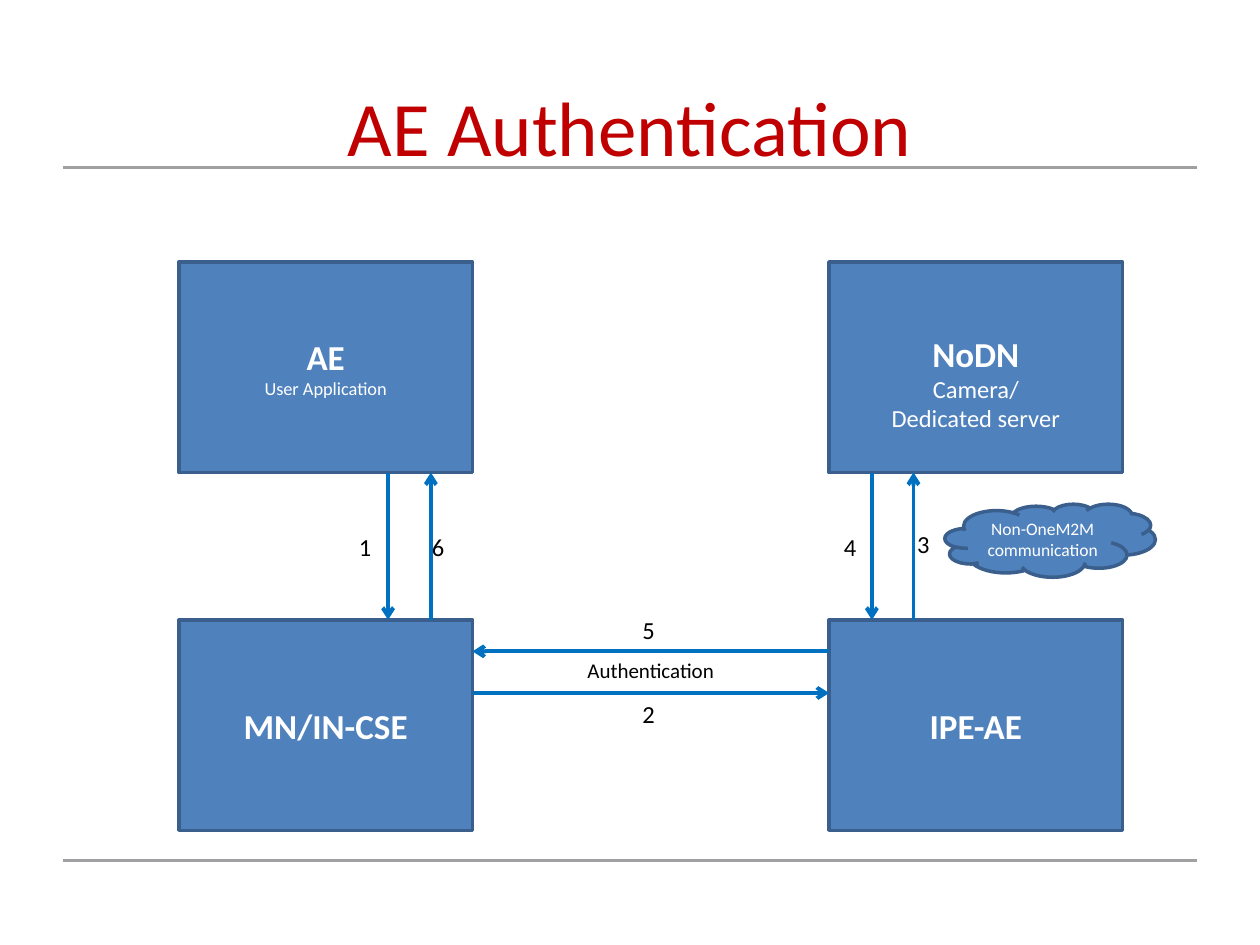
from dataclasses import dataclass

from lxml.etree import SubElement
from pptx import Presentation
from pptx.dml.color import RGBColor
from pptx.enum.shapes import MSO_CONNECTOR as Connector, MSO_SHAPE as Preset
from pptx.enum.text import MSO_ANCHOR as Anchor, PP_ALIGN as Align
from pptx.oxml.ns import qn
from pptx.slide import Slide
from pptx.text.text import TextFrame
from pptx.util import Inches, Pt

BOX_WIDTH, BOX_HEIGHT = 2.33, 1.67
LEFT, RIGHT = 1.42, 6.58
TOP, BOTTOM = 2.08, 4.92
INNER_LEFT, INNER_TOP = LEFT + BOX_WIDTH, TOP + BOX_HEIGHT
WHITE, BLACK, RED = "FFFFFF", "000000", "C00000"
FILL, OUTLINE, ARROW, RULE = "4F81BD", "3A5F8C", "0070C0", "A0A0A3"


@dataclass
class Line:
    text: str
    size: float
    color: str = WHITE
    bold: bool = False


@dataclass
class Node:
    left: float
    top: float
    lines: list[Line]
    width: float = BOX_WIDTH
    height: float = BOX_HEIGHT
    preset: Preset = Preset.RECTANGLE
    margin_top: float = 0.05


@dataclass
class Label:
    left: float
    top: float
    line: Line
    width: float = 0.3
    height: float = 0.34
    align: Align = Align.LEFT
    wrap: bool = False


@dataclass
class Stroke:
    start: tuple[float, float]
    end: tuple[float, float]
    color: str = ARROW
    width: float = 2.25
    arrow: bool = True


def rgb(color: str) -> RGBColor:
    return RGBColor.from_string(color)


def write_lines(frame: TextFrame, lines: list[Line], align: Align) -> None:
    for index, line in enumerate(lines):
        paragraph = frame.add_paragraph() if index else frame.paragraphs[0]
        paragraph.alignment = align
        run = paragraph.add_run()
        run.text = line.text
        formats = {"name": "Calibri", "size": Pt(line.size), "bold": line.bold}
        for name, value in formats.items():
            setattr(run.font, name, value)
        run.font.color.rgb = rgb(line.color)


def draw_node(slide: Slide, node: Node) -> None:
    shape = slide.shapes.add_shape(
        node.preset, Inches(node.left), Inches(node.top), Inches(node.width), Inches(node.height)
    )
    shape.shadow.inherit = False
    shape.fill.solid()
    shape.fill.fore_color.rgb = rgb(FILL)
    shape.line.color.rgb = rgb(OUTLINE)
    shape.line.width = Pt(2)
    frame = shape.text_frame
    formats = {
        "word_wrap": True,
        "vertical_anchor": Anchor.MIDDLE,
        "margin_top": Inches(node.margin_top),
    }
    for name, value in formats.items():
        setattr(frame, name, value)
    write_lines(frame, node.lines, Align.CENTER)


def draw_label(slide: Slide, label: Label) -> None:
    shape = slide.shapes.add_textbox(
        Inches(label.left), Inches(label.top), Inches(label.width), Inches(label.height)
    )
    shape.text_frame.word_wrap = label.wrap
    write_lines(shape.text_frame, [label.line], label.align)


def draw_stroke(slide: Slide, stroke: Stroke) -> None:
    points = [Inches(value) for value in (*stroke.start, *stroke.end)]
    connector = slide.shapes.add_connector(Connector.STRAIGHT, *points)
    connector.line.color.rgb = rgb(stroke.color)
    connector.line.width = Pt(stroke.width)
    if stroke.arrow:
        SubElement(connector.line._get_or_add_ln(), qn("a:tailEnd"), type="arrow")
    SubElement(connector._element.spPr, qn("a:effectLst"))


def heading(text: str) -> Line:
    return Line(text, 20, bold=True)


def build() -> None:
    presentation = Presentation()
    presentation.slide_width = Inches(10)
    presentation.slide_height = Inches(7.5)
    slide = presentation.slides.add_slide(presentation.slide_layouts[6])

    for y in (6.83, 1.33):
        draw_stroke(slide, Stroke((0.5, y), (9.5, y), RULE, 1.75, arrow=False))

    title = Line("AE Authentication", 44, RED)
    draw_label(slide, Label(0.5, 0.58, title, 9, 1.25, Align.CENTER, wrap=True))

    nodes = [
        Node(LEFT, TOP, [heading("AE"), Line("User Application", 10.5)]),
        Node(LEFT, BOTTOM, [heading("MN/IN-CSE")]),
        Node(RIGHT, BOTTOM, [heading("IPE-AE")]),
        Node(
            RIGHT,
            TOP,
            [heading("NoDN"), Line("Camera/", 14), Line("Dedicated server", 14)],
            margin_top=0.29,
        ),
        Node(7.5, 4, [Line("Non-OneM2M communication", 10)], 1.67, 0.58, Preset.CLOUD),
    ]
    for node in nodes:
        draw_node(slide, node)

    for down, up in ((3.08, 3.42), (6.92, 7.25)):
        draw_stroke(slide, Stroke((down, INNER_TOP), (down, BOTTOM)))
        draw_stroke(slide, Stroke((up, BOTTOM), (up, INNER_TOP)))
    draw_stroke(slide, Stroke((INNER_LEFT, 5.5), (RIGHT, 5.5)))
    draw_stroke(slide, Stroke((RIGHT, 5.17), (INNER_LEFT, 5.17)))

    caption = Line("Authentication", 12, BLACK)
    draw_label(
        slide, Label(INNER_LEFT, 5.17, caption, RIGHT - INNER_LEFT, 0.5, Align.CENTER, wrap=True)
    )
    steps = {
        "1": (2.75, 4.17),
        "2": (5, 5.5),
        "3": (7.18, 4.15),
        "4": (6.6, 4.17),
        "5": (5, 4.83),
        "6": (3.33, 4.17),
    }
    for number, (left, top) in steps.items():
        draw_label(slide, Label(left, top, Line(number, 14, BLACK)))

    presentation.save("out.pptx")


if __name__ == "__main__":
    build()
